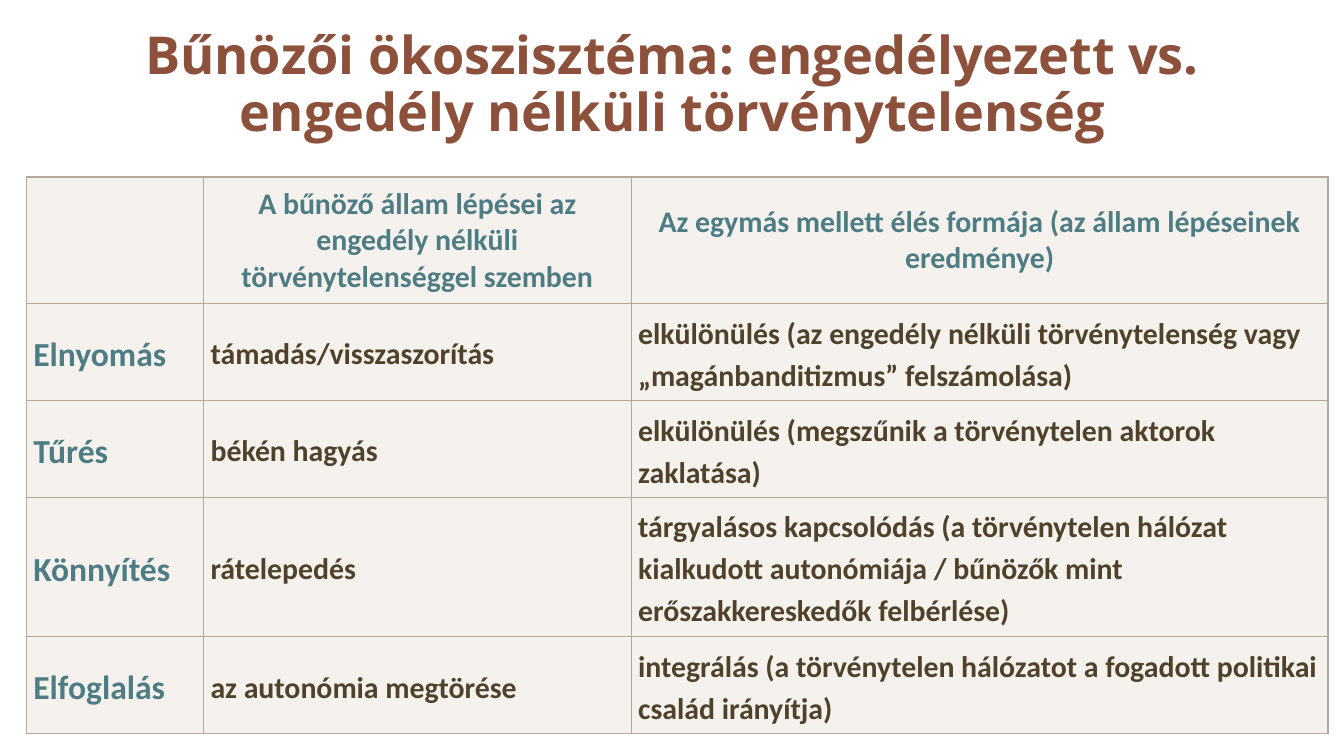
from lxml import etree
from pptx import Presentation
from pptx import util as u
from pptx.dml.color import RGBColor
from pptx.enum import text
from pptx.oxml import ns

RUST = RGBColor(0x8D, 0x50, 0x3B)
TEAL = RGBColor(0x4D, 0x7C, 0x85)
BROWN = RGBColor(0x50, 0x41, 0x2B)
SAND = RGBColor(0xEF, 0xEA, 0xE4)
TAUPE = RGBColor(0xB3, 0xA9, 0x9D)

TITLE = "Bűnözői ökoszisztéma: engedélyezett vs. engedély nélküli törvénytelenség"
ROWS = [
    ("", "A bűnöző állam lépései az engedély nélküli törvénytelenséggel szemben",
     "Az egymás mellett élés formája (az állam lépéseinek eredménye)"),
    ("Elnyomás", "támadás/visszaszorítás",
     "elkülönülés (az engedély nélküli törvénytelenség vagy „magánbanditizmus” felszámolása)"),
    ("Tűrés", "békén hagyás",
     "elkülönülés (megszűnik a törvénytelen aktorok zaklatása)"),
    ("Könnyítés", "rátelepedés",
     "tárgyalásos kapcsolódás (a törvénytelen hálózat kialkudott autonómiája / "
     "bűnözők mint erőszakkereskedők felbérlése)"),
    ("Elfoglalás", "az autonómia megtörése",
     "integrálás (a törvénytelen hálózatot a fogadott politikai család irányítja)"),
]
COLUMN_WIDTHS = (3.35, 8.08, 13.17)
ROW_HEIGHTS = (2.39, 1.83, 1.83, 2.64, 1.83)


def write_text(frame, content, *, font, size, color, align=text.PP_ALIGN.LEFT, spacing=1.0):
    paragraph = frame.paragraphs[0]
    paragraph.alignment = align
    paragraph.line_spacing = spacing
    paragraph.font.size = u.Pt(size)
    if not content:
        return
    run = paragraph.add_run()
    run.text = content
    run.font.name = font
    run.font.size = u.Pt(size)
    run.font.bold = True
    run.font.color.rgb = color


def style_cell(cell, borders):
    cell.fill.solid()
    cell.fill.fore_color.rgb = SAND
    properties = cell._tc.get_or_add_tcPr()
    color = properties.find(".//" + ns.qn("a:srgbClr"))
    etree.SubElement(color, ns.qn("a:alpha"), val="60000")
    for index, (side, points) in enumerate(borders.items()):
        line = etree.Element(ns.qn("a:ln" + side), w=str(u.Pt(points)))
        fill = etree.SubElement(line, ns.qn("a:solidFill"))
        etree.SubElement(fill, ns.qn("a:srgbClr"), val=str(TAUPE))
        properties.insert(index, line)


def add_title(slide, left, top, width, height):
    shape = slide.shapes.add_textbox(left, top, width, height)
    frame = shape.text_frame
    frame.word_wrap = True
    frame.vertical_anchor = text.MSO_ANCHOR.MIDDLE
    write_text(frame, TITLE, font="Open Sans", size=28, color=RUST,
               align=text.PP_ALIGN.CENTER, spacing=0.9)


def add_comparison_table(slide, left, top, width, height):
    table = slide.shapes.add_table(len(ROWS), len(COLUMN_WIDTHS), left, top, width, height).table
    for column, share in zip(table.columns, COLUMN_WIDTHS):
        column.width = int(width * share / sum(COLUMN_WIDTHS))
    for row, share in zip(table.rows, ROW_HEIGHTS):
        row.height = int(height * share / sum(ROW_HEIGHTS))
    last_row, last_column = len(ROWS) - 1, len(COLUMN_WIDTHS) - 1
    for i, contents in enumerate(ROWS):
        for j, content in enumerate(contents):
            cell = table.cell(i, j)
            cell.margin_left = cell.margin_right = u.Cm(0.13)
            cell.margin_top = cell.margin_bottom = u.Cm(0.13)
            cell.vertical_anchor = text.MSO_ANCHOR.MIDDLE
            header = i == 0
            write_text(cell.text_frame, content, font="Calibri",
                       size=18 if j == 0 else 16,
                       color=TEAL if header or j == 0 else BROWN,
                       align=text.PP_ALIGN.CENTER if header else text.PP_ALIGN.LEFT,
                       spacing=1.0 if header else 1.15)
            outer = {"L": j == 0, "R": j == last_column, "T": header, "B": i == last_row}
            style_cell(cell, {side: 1 if edge else 0.5 for side, edge in outer.items()})


def main():
    presentation = Presentation()
    presentation.slide_width = u.Cm(25.4)
    presentation.slide_height = u.Cm(14.29)
    slide = presentation.slides.add_slide(presentation.slide_layouts[6])
    add_title(slide, u.Cm(0.3), u.Cm(0.36), u.Cm(24.8), u.Cm(2.54))
    add_comparison_table(slide, u.Cm(0.5), u.Cm(3.35), u.Cm(24.6), u.Cm(10.52))
    presentation.save("out.pptx")


if __name__ == "__main__":
    main()
